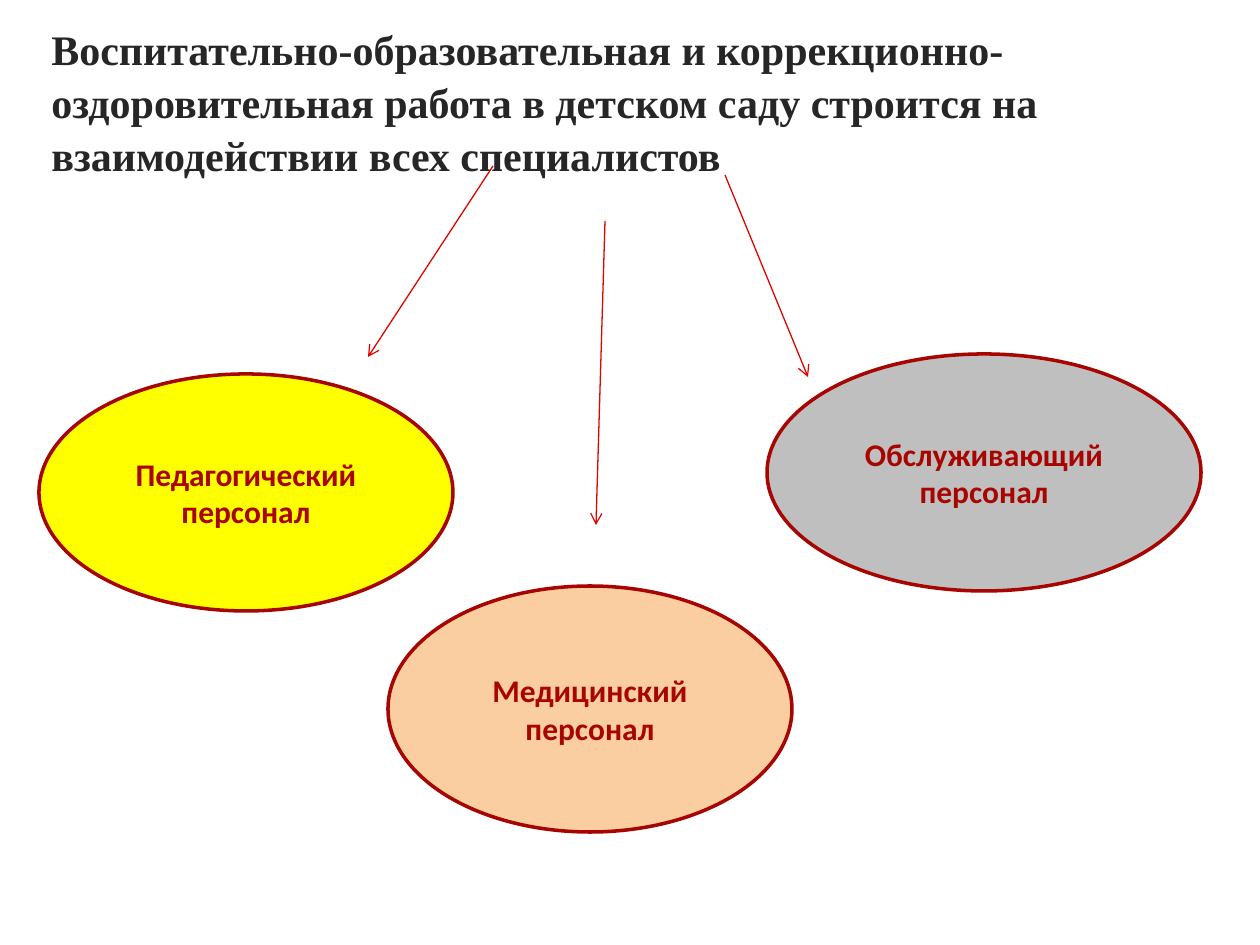
from lxml.etree import SubElement
from pptx import Presentation
from pptx.dml.color import RGBColor
from pptx.enum.shapes import MSO_CONNECTOR as CONNECTOR, MSO_SHAPE as SHAPE
from pptx.enum.text import MSO_ANCHOR as ANCHOR, PP_ALIGN as ALIGN
from pptx.oxml.ns import qn
from pptx.util import Pt

EMU_PER_PX = 914400 / 126
SLIDE_WIDTH, SLIDE_HEIGHT = 1260, 945

INK = RGBColor(0x26, 0x26, 0x26)
LABEL_RED = RGBColor(0xA8, 0x05, 0x01)
OUTLINE_RED = RGBColor(0xA6, 0x05, 0x01)
ARROW_RED = RGBColor(0xDD, 0x05, 0x00)
GREY = RGBColor(0xBF, 0xBF, 0xBF)
PEACH = RGBColor(0xFA, 0xCE, 0xA1)
YELLOW = RGBColor(0xFF, 0xFF, 0x00)

HEADING_FORMAT = {"name": "Times New Roman", "size": Pt(24), "bold": True}
LABEL_FORMAT = {"name": "Calibri", "size": Pt(18), "bold": True}

HEADING = (
    "Воспитательно-образовательная и коррекционно-оздоровительная "
    "работа в детском саду строится на взаимодействии всех специалистов"
)
STAFF = [
    ("Обслуживающий персонал", GREY, (767, 354, 434, 237)),
    ("Медицинский персонал", PEACH, (388, 586, 404, 246)),
    ("Педагогический персонал", YELLOW, (39, 374, 414, 237)),
]
ARROWS = [
    (493, 166, 368, 357),
    (605, 221, 596, 525),
    (725, 175, 808, 377),
]


def emu(*lengths):
    """Turn px lengths into EMU."""
    return [round(length * EMU_PER_PX) for length in lengths]


def write(paragraph, text, formats, color):
    """Put formatted text into a paragraph."""
    run = paragraph.add_run()
    run.text = text
    for attribute, value in formats.items():
        setattr(run.font, attribute, value)
    run.font.color.rgb = color


def add_heading(slide, box):
    """Place the statement at the top of the slide."""
    frame = slide.shapes.add_textbox(*emu(*box)).text_frame
    frame.word_wrap = True
    statement = frame.paragraphs[0]
    statement.line_spacing = 1.05
    write(statement, HEADING, HEADING_FORMAT, INK)


def add_staff_group(slide, label, color, box):
    """Draw one staff group as a labelled ellipse."""
    ellipse = slide.shapes.add_shape(SHAPE.OVAL, *emu(*box))
    ellipse.shadow.inherit = False
    ellipse.fill.solid()
    ellipse.fill.fore_color.rgb = color
    ellipse.line.color.rgb = OUTLINE_RED
    ellipse.line.width = Pt(2)
    frame = ellipse.text_frame
    frame.word_wrap = True
    frame.vertical_anchor = ANCHOR.MIDDLE
    frame.paragraphs[0].alignment = ALIGN.CENTER
    write(frame.paragraphs[0], label, LABEL_FORMAT, LABEL_RED)


def add_arrow(slide, ends):
    """Draw a thin open-headed arrow between two points."""
    arrow = slide.shapes.add_connector(CONNECTOR.STRAIGHT, *emu(*ends))
    arrow.line.color.rgb = ARROW_RED
    arrow.line.width = Pt(0.75)
    SubElement(arrow.line._get_or_add_ln(), qn("a:tailEnd"), type="arrow")
    SubElement(arrow._element.spPr, qn("a:effectLst"))


def main():
    """Build and save the slide."""
    deck = Presentation()
    deck.slide_width, deck.slide_height = emu(SLIDE_WIDTH, SLIDE_HEIGHT)
    slide = deck.slides.add_slide(deck.slide_layouts[6])
    for label, color, box in STAFF:
        add_staff_group(slide, label, color, box)
    add_heading(slide, (39, 15, 1221, 165))
    for ends in ARROWS:
        add_arrow(slide, ends)
    deck.save("out.pptx")


if __name__ == "__main__":
    main()
